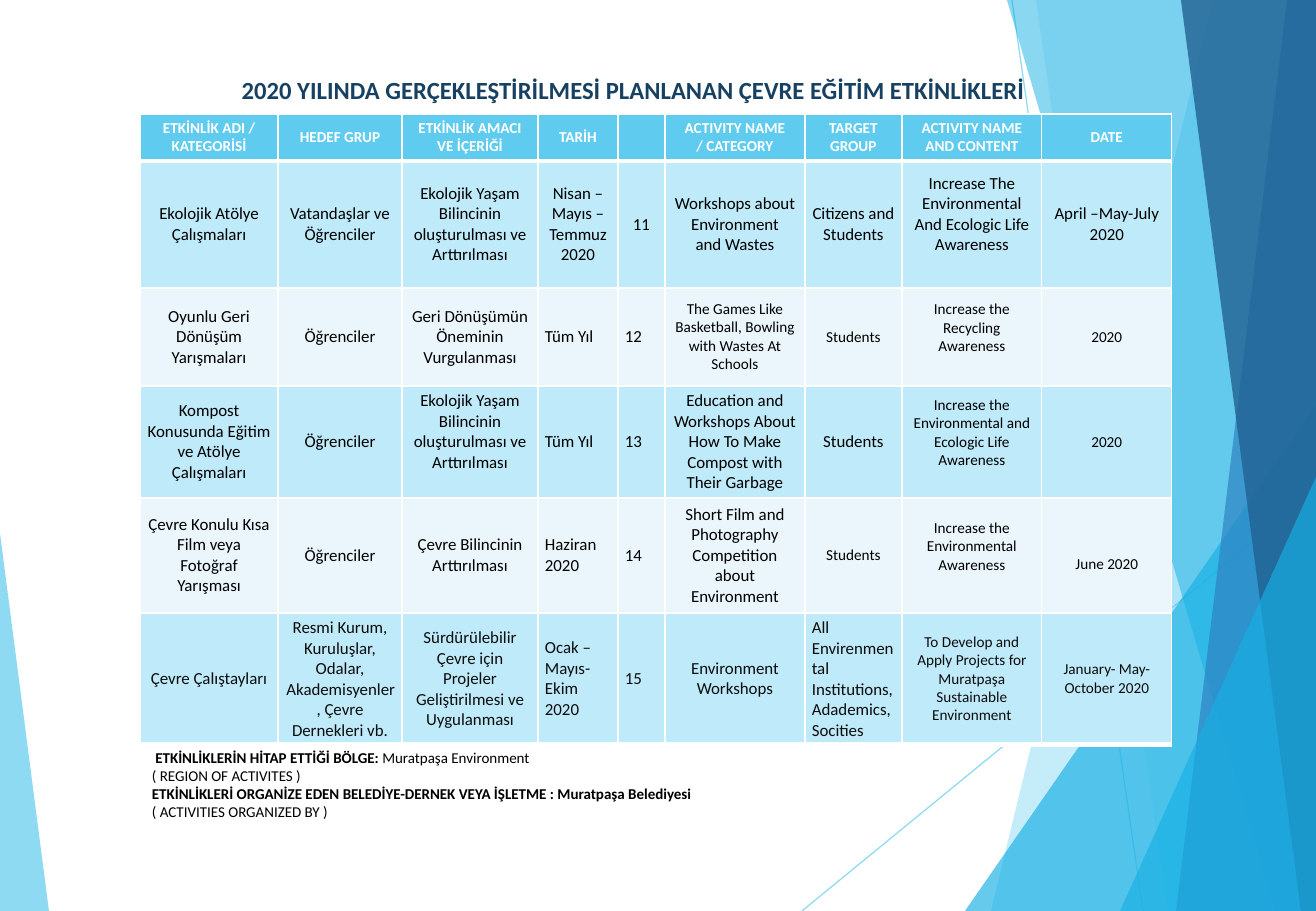
from dataclasses import dataclass
from itertools import accumulate

from lxml import etree
from pptx import Presentation
from pptx import util as u
from pptx.dml.color import RGBColor
from pptx.enum import shapes, text
from pptx.oxml import ns

PX = 7526  # EMU in one px
WIDTH, HEIGHT = 1316, 911
FONT = "Calibri"
COLOURS = {
    "sky": "5FCBEF", "azure": "17B0E4", "blue": "2E83C3", "navy": "226292",
    "title": "174162", "band": "BFEAF9", "pale": "EAF6FC",
    "white": "FFFFFF", "black": "000000", "ink": "0D0D0D",
}
CENTER, LEFT = text.PP_ALIGN.CENTER, text.PP_ALIGN.LEFT
TABLE_LEFT = 140
COLUMN_WIDTHS = [138, 124, 136, 80, 47, 140, 97, 140, 130]
INSET_X, INSET_Y = 7, 5


@dataclass
class Ray:
    start: tuple[int, int]
    end: tuple[int, int]


@dataclass
class Panel:
    """Band from a slanted left edge to the right side of the slide."""
    top_x: int
    bottom_x: int
    colour: str
    opacity: int


@dataclass
class Wedge:
    left: int
    top: int
    width: int
    apex: int
    colour: str
    opacity: int


@dataclass
class Cell:
    words: str
    size: int = 10
    align: text.PP_ALIGN = CENTER
    lift: int = 0  # extra margin below, or above when negative


@dataclass
class Row:
    height: int
    fill: str
    cells: list[Cell]
    ink: str = "black"
    bold: bool = False
    top_rule: int = 1
    bottom_rule: int = 1


RAYS = [Ray((1012, 0), (1143, HEIGHT)), Ray((WIDTH, 490), (802, HEIGHT))]
FACETS = [
    Panel(1213, 991, "sky", 36),
    Panel(1036, 1168, "sky", 20),
    Wedge(965, 405, 351, 1, "azure", 66),
    Panel(1007, 1275, "azure", 50),
    Panel(1287, 1176, "blue", 70),
    Panel(1181, 1301, "navy", 80),
    Wedge(1120, 477, 196, 1, "azure", 66),
    Wedge(0, 533, 49, 0, "sky", 70),
]

HEADINGS = ["ETKİNLİK ADI / KATEGORİSİ", "HEDEF GRUP", "ETKİNLİK AMACI VE İÇERİĞİ", "TARİH", "",
            "ACTIVITY NAME\n/ CATEGORY", "TARGET GROUP", "ACTIVITY NAME AND CONTENT", "DATE"]
LIFE_GOAL = "Ekolojik Yaşam Bilincinin oluşturulması ve Arttırılması"
PLAN = [
    Row(47, "sky", [Cell(heading, 9) for heading in HEADINGS], "white", True, bottom_rule=3),
    Row(127, "band", [
        Cell("Ekolojik Atölye Çalışmaları"), Cell("Vatandaşlar ve Öğrenciler"), Cell(LIFE_GOAL),
        Cell("Nisan –Mayıs –Temmuz 2020"), Cell("11"),
        Cell("Workshops about Environment\nand Wastes"), Cell("Citizens and Students"),
        Cell("Increase The Environmental And Ecologic Life Awareness", lift=20),
        Cell("April –May-July\n2020")], top_rule=3),
    Row(98, "pale", [
        Cell("Oyunlu Geri Dönüşüm Yarışmaları"), Cell("Öğrenciler"),
        Cell("Geri Dönüşümün Öneminin Vurgulanması"), Cell("Tüm Yıl", align=LEFT),
        Cell("12", align=LEFT),
        Cell("The Games Like Basketball, Bowling with Wastes At Schools", 9), Cell("Students", 9),
        Cell("Increase the Recycling Awareness", 9, lift=18), Cell("2020", 9)]),
    Row(112, "band", [
        Cell("Kompost Konusunda Eğitim ve Atölye Çalışmaları"), Cell("Öğrenciler"),
        Cell(LIFE_GOAL, lift=20), Cell("Tüm Yıl", align=LEFT), Cell("13", align=LEFT),
        Cell("Education and Workshops About How To Make Compost with Their Garbage"),
        Cell("Students"),
        Cell("Increase the Environmental and Ecologic Life Awareness", 9, lift=18),
        Cell("2020", 9)]),
    Row(115, "pale", [
        Cell("Çevre Konulu Kısa Film veya Fotoğraf Yarışması"), Cell("Öğrenciler"),
        Cell("Çevre Bilincinin Arttırılması"), Cell("Haziran 2020", align=LEFT),
        Cell("14", align=LEFT), Cell("Short Film and Photography Competition about Environment"),
        Cell("Students", 9), Cell("Increase the Environmental Awareness", 9, lift=18),
        Cell("June 2020", 9, lift=-18)]),
]
WORKSHOPS = [
    Row(130, "band", [
        Cell("Çevre Çalıştayları"),
        Cell("Resmi Kurum, Kuruluşlar, Odalar, Akademisyenler, Çevre Dernekleri vb."),
        Cell("Sürdürülebilir Çevre için Projeler Geliştirilmesi ve Uygulanması"),
        Cell("Ocak – Mayıs- Ekim 2020", align=LEFT), Cell("15", align=LEFT),
        Cell("Environment Workshops"),
        Cell("All Envirenmental Institutions, Adademics, Socities", align=LEFT),
        Cell("To Develop and Apply Projects for Muratpaşa Sustainable Environment", 9),
        Cell("January- May- October 2020", 9)], "ink", bottom_rule=3),
]


def px(*lengths: int) -> list[u.Emu]:
    return [u.Emu(length * PX) for length in lengths]


def rgb(colour: str) -> RGBColor:
    return RGBColor.from_string(COLOURS[colour])


def set_opacity(shape, opacity: int) -> None:
    colour = next(shape._element.spPr.iter(ns.qn("a:srgbClr")))
    etree.SubElement(colour, ns.qn("a:alpha"), val=str(opacity * 1000))


def draw_ray(slide, ray: Ray) -> None:
    line = slide.shapes.add_connector(shapes.MSO_CONNECTOR.STRAIGHT, *px(*ray.start, *ray.end))
    line.line.color.rgb = rgb("sky")
    line.line.width = u.Pt(0.75)
    set_opacity(line, 70)
    etree.SubElement(line._element.spPr, ns.qn("a:effectLst"))


def draw_facet(slide, facet: Panel | Wedge) -> None:
    if isinstance(facet, Panel):
        builder = slide.shapes.build_freeform(facet.top_x, 0, scale=PX)
        builder.add_line_segments([(WIDTH, 0), (WIDTH, HEIGHT), (facet.bottom_x, HEIGHT)])
        shape = builder.convert_to_shape()
    else:
        shape = slide.shapes.add_shape(
            shapes.MSO_SHAPE.ISOSCELES_TRIANGLE,
            *px(facet.left, facet.top, facet.width, HEIGHT - facet.top))
        shape.adjustments[0] = facet.apex
    shape.shadow.inherit = False
    shape.line.fill.background()
    shape.fill.solid()
    shape.fill.fore_color.rgb = rgb(facet.colour)
    set_opacity(shape, facet.opacity)


def add_run(paragraph, words: str, *, size: float, colour: str = "black",
            bold: bool = False) -> None:
    run = paragraph.add_run()
    run.text = words
    run.font.name, run.font.size, run.font.bold = FONT, u.Pt(size), bold
    run.font.color.rgb = rgb(colour)


def add_text_frame(slide, left: int, top: int, width: int, height: int):
    frame = slide.shapes.add_textbox(*px(left, top, width, height)).text_frame
    frame.word_wrap = True
    return frame


def set_borders(cell, top: int, bottom: int) -> None:
    properties = cell._tc.get_or_add_tcPr()
    for index, (side, width) in enumerate([("L", 1), ("R", 1), ("T", top), ("B", bottom)]):
        border = etree.Element(ns.qn(f"a:ln{side}"), w=str(u.Pt(width)))
        fill = etree.SubElement(border, ns.qn("a:solidFill"))
        etree.SubElement(fill, ns.qn("a:srgbClr"), val=COLOURS["white"])
        properties.insert(index, border)


def fill_cell(cell, content: Cell, row: Row) -> None:
    cell.fill.solid()
    cell.fill.fore_color.rgb = rgb(row.fill)
    cell.vertical_anchor = text.MSO_ANCHOR.MIDDLE
    cell.margin_left, cell.margin_right = px(INSET_X, INSET_X)
    cell.margin_top, cell.margin_bottom = px(
        INSET_Y + max(-content.lift, 0), INSET_Y + max(content.lift, 0))
    for index, words in enumerate(content.words.split("\n")):
        frame = cell.text_frame
        paragraph = frame.add_paragraph() if index else frame.paragraphs[0]
        paragraph.alignment = content.align
        add_run(paragraph, words, size=content.size, colour=row.ink, bold=row.bold)
    set_borders(cell, row.top_rule, row.bottom_rule)


def draw_table(slide, top: int, rows: list[Row]) -> None:
    *_, height = accumulate(row.height for row in rows)
    table = slide.shapes.add_table(
        len(rows), len(COLUMN_WIDTHS), *px(TABLE_LEFT, top, sum(COLUMN_WIDTHS), height)).table
    for column, width in zip(table.columns, px(*COLUMN_WIDTHS)):
        column.width = width
    for table_row, row in zip(table.rows, rows):
        table_row.height = u.Emu(row.height * PX)
        for cell, content in zip(table_row.cells, row.cells):
            fill_cell(cell, content, row)


def main() -> None:
    presentation = Presentation()
    presentation.slide_width, presentation.slide_height = px(WIDTH, HEIGHT)
    slide = presentation.slides.add_slide(presentation.slide_layouts[6])

    # Background facets
    for ray in RAYS:
        draw_ray(slide, ray)
    for facet in FACETS:
        draw_facet(slide, facet)

    # Title
    frame = add_text_frame(slide, 182, 66, 903, 47)
    frame.vertical_anchor = text.MSO_ANCHOR.MIDDLE
    frame.paragraphs[0].alignment = CENTER
    add_run(frame.paragraphs[0],
            "2020 YILINDA GERÇEKLEŞTİRİLMESİ PLANLANAN ÇEVRE EĞİTİM ETKİNLİKLERİ",
            size=14.6, colour="title", bold=True)

    # Activity tables
    draw_table(slide, 114, PLAN)
    draw_table(slide, 613, WORKSHOPS)

    # Region and organiser
    frame = add_text_frame(slide, TABLE_LEFT, 742, 964, 85)
    notes = [
        [(" ETKİNLİKLERİN HİTAP ETTİĞİ BÖLGE: ", True), ("Muratpaşa Environment", False)],
        [("( REGION OF ACTIVITES )", False)],
        [("ETKİNLİKLERİ ORGANİZE EDEN BELEDİYE-DERNEK VEYA İŞLETME : Muratpaşa Belediyesi", True)],
        [("( ACTIVITIES ORGANIZED BY )", False)],
    ]
    for index, runs in enumerate(notes):
        paragraph = frame.add_paragraph() if index else frame.paragraphs[0]
        for words, bold in runs:
            add_run(paragraph, words, size=8.9, bold=bold)

    presentation.save("out.pptx")


if __name__ == "__main__":
    main()
